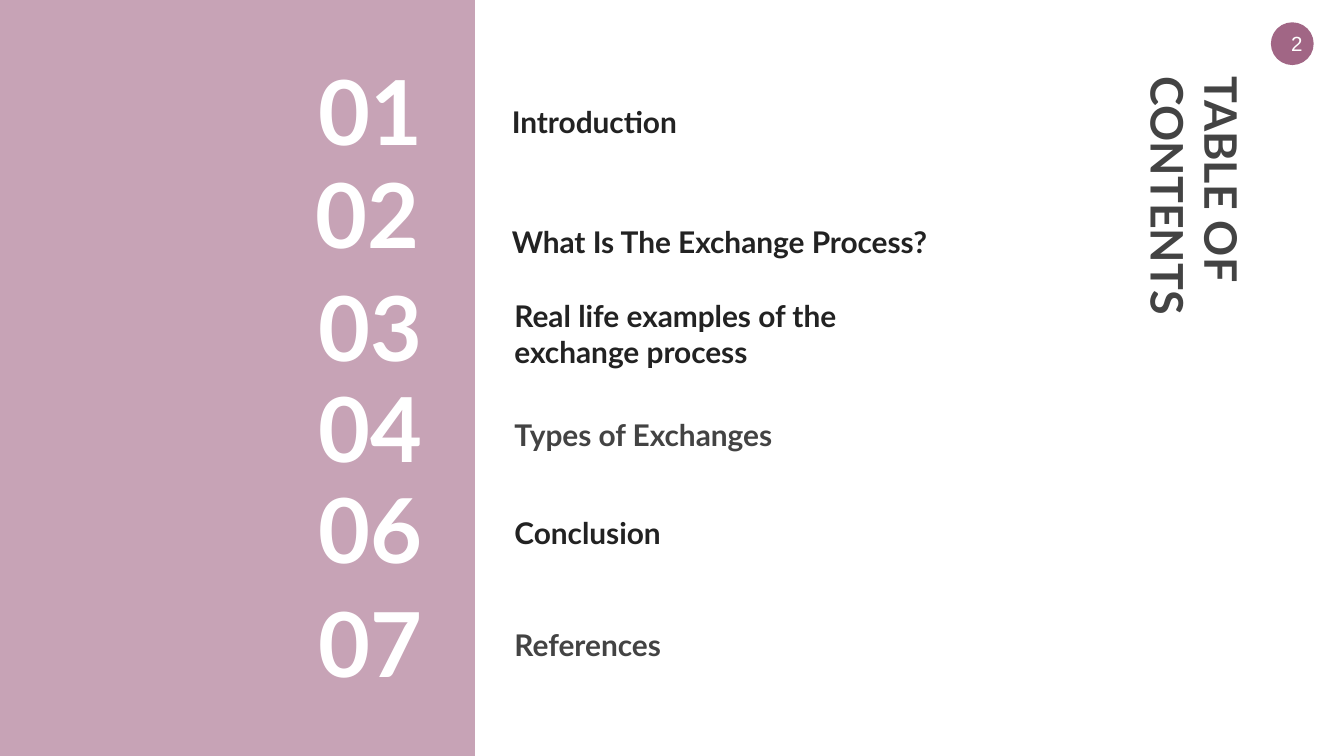
from pptx import Presentation
from pptx.dml.color import RGBColor
from pptx.enum import shapes, text
from pptx.util import Inches, Pt

MAUVE = RGBColor(0xC7, 0xA3, 0xB6)
PLUM = RGBColor(0xA1, 0x66, 0x85)
WHITE = RGBColor(0xFF, 0xFF, 0xFF)
INK = RGBColor(0x22, 0x22, 0x22)
GREY = RGBColor(0x43, 0x43, 0x43)

MIDDLE = text.MSO_ANCHOR.MIDDLE
BOTTOM = text.MSO_ANCHOR.BOTTOM

PAGE_WIDTH = Inches(10)
PAGE_HEIGHT = PAGE_WIDTH * 9 // 16

ENTRIES = [
    ("01", (2.27, 0.62, 1.82, 0.39), "Introduction", (3.71, 0.51, 2.46, 0.63), INK),
    ("02", (2.25, 1.39, 1.69, 0.39), "What Is The Exchange Process?", (3.71, 1.36, 3.53, 0.67), INK),
    ("03", (2.27, 2.23, 1.64, 0.39), "Real life examples of the exchange process",
     (3.73, 2.09, 3.27, 0.76), INK),
    ("04", (2.27, 2.98, 1.64, 0.39), "Types of Exchanges", (3.73, 2.84, 2.46, 0.63), GREY),
    ("06", (2.27, 3.73, 1.64, 0.39), "Conclusion", (3.73, 3.57, 2.46, 0.63), INK),
    ("07", (2.27, 4.58, 1.64, 0.39), "References", (3.73, 4.4, 2.46, 0.63), GREY),
]


def write(box, words, size, colour, anchor, font="Lato", bold=True, align=text.PP_ALIGN.LEFT):
    """Fill a box with one formatted paragraph."""
    frame = box.text_frame
    frame.text = words
    frame.word_wrap = True
    frame.auto_size = text.MSO_AUTO_SIZE.NONE
    frame.vertical_anchor = anchor
    frame.margin_left = frame.margin_right = Inches(0.1)
    frame.margin_top = frame.margin_bottom = Inches(0.1)
    paragraph = frame.paragraphs[0]
    paragraph.alignment = align
    span = paragraph.runs[0].font
    span.name, span.size, span.bold = font, Pt(size), bold
    span.color.rgb = colour


def add_label(page, place, words, size, colour, anchor):
    """Add a text box at the given place."""
    box = page.shapes.add_textbox(*map(Inches, place))
    write(box, words, size, colour, anchor)


def add_block(page, kind, place, colour, line_width):
    """Add a flat shape whose outline matches its fill."""
    block = page.shapes.add_shape(kind, *place)
    block.shadow.inherit = False
    block.fill.solid()
    block.fill.fore_color.rgb = colour
    block.line.color.rgb = colour
    block.line.width = Pt(line_width)
    return block


def set_title(page):
    """Turn the title placeholder to read down the right side."""
    title = page.shapes.title
    title.left, title.top, title.width, title.height = map(Inches, (7.3, 1.8, 3.19, 0.53))
    title.rotation = 90
    write(title, "TABLE OF CONTENTS", 24, GREY, MIDDLE)


def add_page_number(page):
    """Add the round page number badge."""
    place = map(Inches, (9.47, 0.18, 0.29, 0.29))
    badge = add_block(page, shapes.MSO_SHAPE.OVAL, place, PLUM, 2)
    write(badge, "2", 11, WHITE, MIDDLE, "Arial", False, text.PP_ALIGN.CENTER)
    frame = badge.text_frame
    frame.word_wrap = False
    frame.margin_left, frame.margin_right = Inches(0.12), Inches(0.05)
    frame.margin_top = frame.margin_bottom = 0


def main():
    """Build the contents page."""
    deck = Presentation()
    deck.slide_width, deck.slide_height = PAGE_WIDTH, PAGE_HEIGHT
    page = deck.slides.add_slide(deck.slide_layouts[5])
    set_title(page)
    panel = (0, 0, Inches(3.53), PAGE_HEIGHT)
    add_block(page, shapes.MSO_SHAPE.RECTANGLE, panel, MAUVE, 0.75)
    for number, number_place, topic, topic_place, colour in ENTRIES:
        add_label(page, topic_place, topic, 16, colour, BOTTOM)
        add_label(page, number_place, number, 48, WHITE, MIDDLE)
    add_page_number(page)
    deck.save("out.pptx")


if __name__ == "__main__":
    main()
